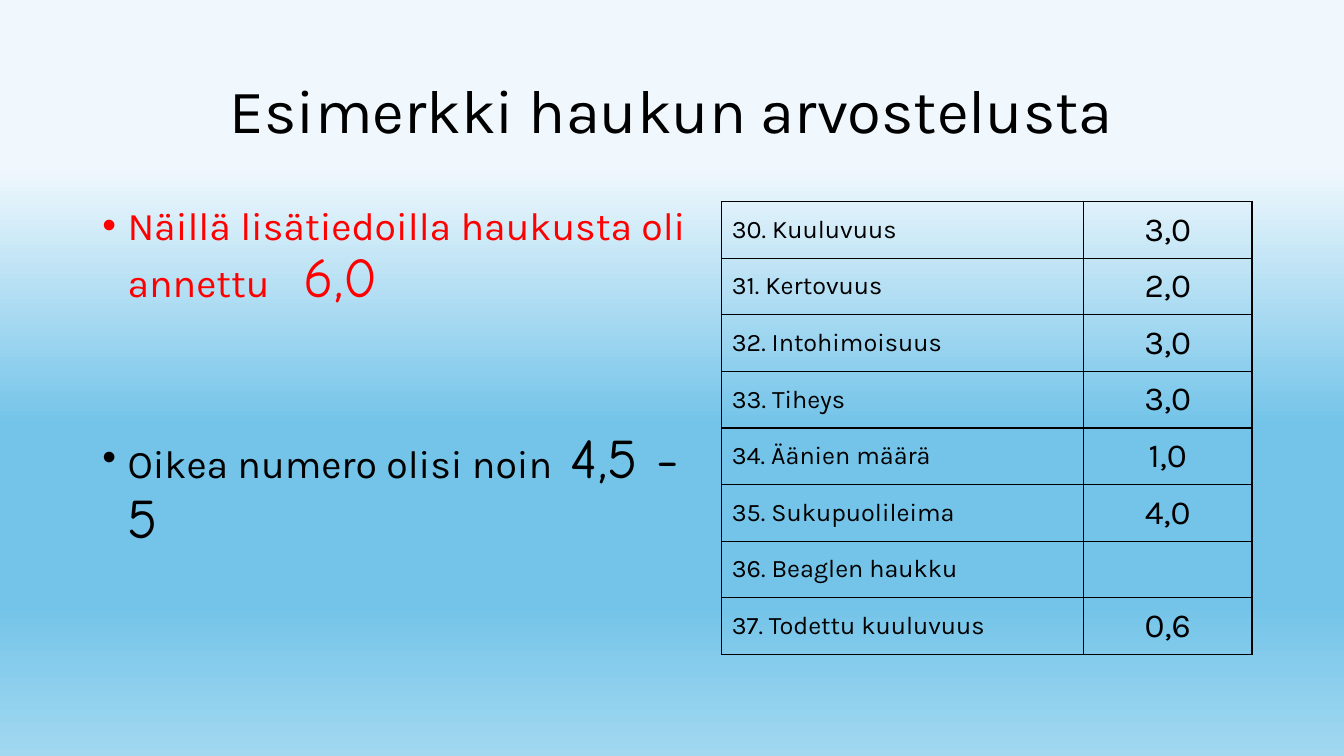
from dataclasses import dataclass

from lxml.etree import SubElement
from pptx import Presentation
from pptx.dml.color import RGBColor
from pptx.enum.text import MSO_ANCHOR as Anchor, PP_ALIGN as Align
from pptx.oxml.ns import qn
from pptx.util import Inches, Pt

SLIDE_WIDTH, SLIDE_HEIGHT = Inches(13.33), Inches(7.5)
GRID_COLUMNS, GRID_ROWS = 160, 90
LABEL_FONT, GRADE_FONT = "Karla", "Comic Neue"
BLACK, RED = "000000", "FF0000"
SKY_STOPS = ((22, "F0F8FD"), (56, "74C4E9"), (80, "74C4E9"), (100, "A2D8F0"))
TABLE_COLUMNS = (43.08, 20.04)
TABLE_ROW = 6.74


@dataclass(frozen=True)
class Area:
    left: float
    top: float
    width: float
    height: float

    def box(self) -> tuple:
        return (columns(self.left), rows(self.top),
                columns(self.width), rows(self.height))


@dataclass(frozen=True)
class Remark:
    text: str
    grade: str
    color: str
    space_before: float


@dataclass(frozen=True)
class Score:
    label: str
    value: str


TITLE_AREA = Area(11, 4.8, 138, 17.4)
REMARK_AREA = Area(11, 24, 73.56, 57.12)

REMARKS = (
    Remark("Näillä lisätiedoilla haukusta oli annettu\t", "6,0", RED, 10),
    Remark("Oikea numero olisi noin", " 4,5 - 5", BLACK, 86),
)

SCORES = (
    Score("30. Kuuluvuus", "3,0"),
    Score("31. Kertovuus", "2,0"),
    Score("32. Intohimoisuus", "3,0"),
    Score("33. Tiheys", "3,0"),
    Score("34. Äänien määrä", "1,0"),
    Score("35. Sukupuolileima", "4,0"),
    Score("36. Beaglen haukku", ""),
    Score("37. Todettu kuuluvuus", "0,6"),
)

SCORE_AREA = Area(85.92, 24, sum(TABLE_COLUMNS), TABLE_ROW * len(SCORES))


def columns(count: float) -> int:
    return round(SLIDE_WIDTH * count / GRID_COLUMNS)


def rows(count: float) -> int:
    return round(SLIDE_HEIGHT * count / GRID_ROWS)


def color_of(value: str) -> RGBColor:
    return RGBColor.from_string(value)


def style(font, size: float, color: str, name: str = LABEL_FONT) -> None:
    font.name = name
    font.size = Pt(size)
    font.color.rgb = color_of(color)


def paint_sky(slide) -> None:
    fill = slide.background.fill
    fill.gradient()
    fill.gradient_angle = 270
    properties = slide.background._cSld.bg.bgPr
    stop_list = properties.find(".//" + qn("a:gsLst"))
    for stop in list(stop_list):
        stop_list.remove(stop)
    for position, color in SKY_STOPS:
        stop = SubElement(stop_list, qn("a:gs"), pos=str(position * 1000))
        SubElement(stop, qn("a:srgbClr"), val=color)


def add_text_frame(slide, area: Area, anchor: Anchor):
    frame = slide.shapes.add_textbox(*area.box()).text_frame
    frame.word_wrap = True
    frame.vertical_anchor = anchor
    return frame


def add_title(slide, text: str) -> None:
    paragraph = add_text_frame(slide, TITLE_AREA, Anchor.MIDDLE).paragraphs[0]
    paragraph.text = text
    paragraph.alignment = Align.CENTER
    paragraph.line_spacing = 0.9
    style(paragraph.font, 44, BLACK)


def add_bullet(paragraph) -> None:
    properties = paragraph._p.get_or_add_pPr()
    properties.set("marL", str(Inches(0.25)))
    properties.set("indent", str(Inches(-0.25)))
    SubElement(properties, qn("a:buFont"), typeface="Arial")
    SubElement(properties, qn("a:buChar"), char="•")


def add_remarks(slide) -> None:
    frame = add_text_frame(slide, REMARK_AREA, Anchor.TOP)
    for index, remark in enumerate(REMARKS):
        paragraph = frame.add_paragraph() if index else frame.paragraphs[0]
        paragraph.line_spacing = 0.9
        paragraph.space_before = Pt(remark.space_before)
        add_bullet(paragraph)
        for text, size, font_name in ((remark.text, 28, LABEL_FONT),
                                      (remark.grade, 40, GRADE_FONT)):
            run = paragraph.add_run()
            run.text = text
            style(run.font, size, remark.color, font_name)


def add_borders(cell) -> None:
    properties = cell._tc.get_or_add_tcPr()
    for side in ("lnL", "lnR", "lnT", "lnB"):
        line = SubElement(properties, qn(f"a:{side}"), w=str(Pt(1)))
        fill = SubElement(line, qn("a:solidFill"))
        SubElement(fill, qn("a:srgbClr"), val=BLACK)


def fill_cell(cell, text: str, size: float, alignment: Align) -> None:
    add_borders(cell)
    cell.fill.background()
    cell.vertical_anchor = Anchor.MIDDLE
    if text:
        paragraph = cell.text_frame.paragraphs[0]
        paragraph.text = text
        paragraph.alignment = alignment
        style(paragraph.font, size, BLACK)


def add_scores(slide) -> None:
    table = slide.shapes.add_table(
        len(SCORES), len(TABLE_COLUMNS), *SCORE_AREA.box()).table
    table.first_row = False
    table.horz_banding = False
    for column, width in zip(table.columns, TABLE_COLUMNS):
        column.width = columns(width)
    for row, score in zip(table.rows, SCORES):
        row.height = rows(TABLE_ROW)
        fill_cell(row.cells[0], score.label, 18, Align.LEFT)
        fill_cell(row.cells[1], score.value, 24, Align.CENTER)


def main() -> None:
    presentation = Presentation()
    presentation.slide_width = SLIDE_WIDTH
    presentation.slide_height = SLIDE_HEIGHT
    slide = presentation.slides.add_slide(presentation.slide_layouts[6])
    paint_sky(slide)
    add_title(slide, "Esimerkki haukun arvostelusta")
    add_remarks(slide)
    add_scores(slide)
    presentation.save("out.pptx")


if __name__ == "__main__":
    main()
